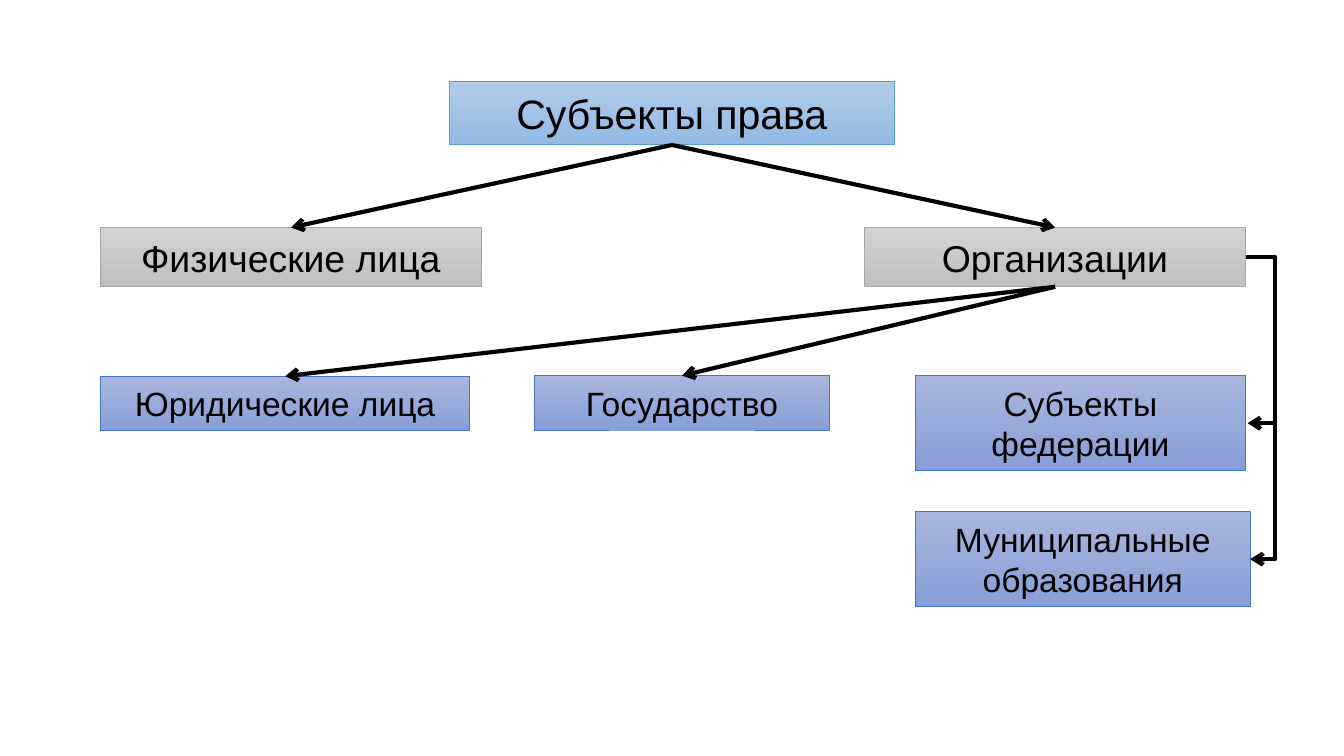
from lxml import etree
from pptx import Presentation
from pptx.dml.color import RGBColor
from pptx.enum.shapes import MSO_CONNECTOR, MSO_SHAPE
from pptx.enum.text import MSO_ANCHOR, MSO_AUTO_SIZE, PP_ALIGN
from pptx.oxml.ns import qn
from pptx.util import Cm, Pt

RECTANGLE = MSO_SHAPE.RECTANGLE
STRAIGHT = MSO_CONNECTOR.STRAIGHT
ELBOW = MSO_CONNECTOR.ELBOW
MIDDLE = MSO_ANCHOR.MIDDLE
FIT_SHAPE = MSO_AUTO_SIZE.SHAPE_TO_FIT_TEXT
CENTER = PP_ALIGN.CENTER

COLORS = {
    "black": "000000",
    "blue_top": "B1CBE9", "blue_bottom": "93B9E4", "blue_edge": "5B9BD5",
    "gray_top": "D2D2D2", "gray_bottom": "C0C0C0", "gray_edge": "A5A5A5",
    "indigo_top": "A8B7DF", "indigo_bottom": "889ED7", "indigo_edge": "4472C4",
}


def color(name):
    return RGBColor.from_string(COLORS[name])


def add_arrow(kind, x1, y1, x2, y2):
    arrow = page.shapes.add_connector(kind, Cm(x1), Cm(y1), Cm(x2), Cm(y2))
    arrow.line.color.rgb = color("black")
    arrow.line.width = Pt(2.25)
    etree.SubElement(arrow.line._get_or_add_ln(), qn("a:tailEnd"), type="arrow")
    etree.SubElement(arrow._element.spPr, qn("a:effectLst"))
    return arrow


deck = Presentation()
deck.slide_width = Cm(25.4)
deck.slide_height = Cm(14.29)
page = deck.slides.add_slide(deck.slide_layouts[6])

BOXES = [
    ("Субъекты права", "blue", 22, 8.5, 1.55, 8.4, 1.19),
    ("Физические лица", "gray", 20, 1.9, 4.3, 7.2, 1.12),
    ("Организации", "gray", 20, 16.34, 4.3, 7.2, 1.12),
    ("Юридические лица", "indigo", 18, 1.9, 7.11, 6.98, 1.03),
    ("Государство", "indigo", 18, 10.1, 7.1, 5.58, 1.03),
    ("Субъекты федерации", "indigo", 18, 17.3, 7.1, 6.24, 1.8),
    ("Муниципальные образования", "indigo", 18, 17.3, 9.67, 6.33, 1.8),
]
tops = {}
bottoms = {}
for text, tint, size, left, top, width, height in BOXES:
    box = page.shapes.add_shape(RECTANGLE, Cm(left), Cm(top), Cm(width), Cm(height))
    box.shadow.inherit = False
    box.fill.gradient()
    box.fill.gradient_angle = 270
    for stop, end in zip(box.fill.gradient_stops, ("top", "bottom")):
        stop.color.rgb = color(f"{tint}_{end}")
    box.line.color.rgb = color(f"{tint}_edge")
    box.line.width = Pt(0.5)
    frame = box.text_frame
    frame.word_wrap = True
    frame.auto_size = FIT_SHAPE
    frame.vertical_anchor = MIDDLE
    para = frame.paragraphs[0]
    para.alignment = CENTER
    span = para.add_run()
    span.text = text
    span.font.name = "Arial"
    span.font.size = Pt(size)
    span.font.color.rgb = color("black")
    tops[text] = (left + width / 2, top)
    bottoms[text] = (left + width / 2, top + height)

BRANCHES = [
    ("Субъекты права", "Физические лица"),
    ("Субъекты права", "Организации"),
    ("Организации", "Юридические лица"),
    ("Организации", "Государство"),
]
for parent, child in BRANCHES:
    add_arrow(STRAIGHT, *bottoms[parent], *tops[child])

BEND_X = 24.1
for x1, y1, x2, y2 in [(23.54, 4.86, 23.58, 8), (BEND_X, 8, 23.63, 10.57)]:
    elbow = add_arrow(ELBOW, x1, y1, x2, y2)
    bend = round((BEND_X - x1) / (x2 - x1) * 100000)
    guides = elbow._element.spPr.find(qn("a:prstGeom")).get_or_add_avLst()
    etree.SubElement(guides, qn("a:gd"), name="adj1", fmla=f"val {bend}")

deck.save("out.pptx")
